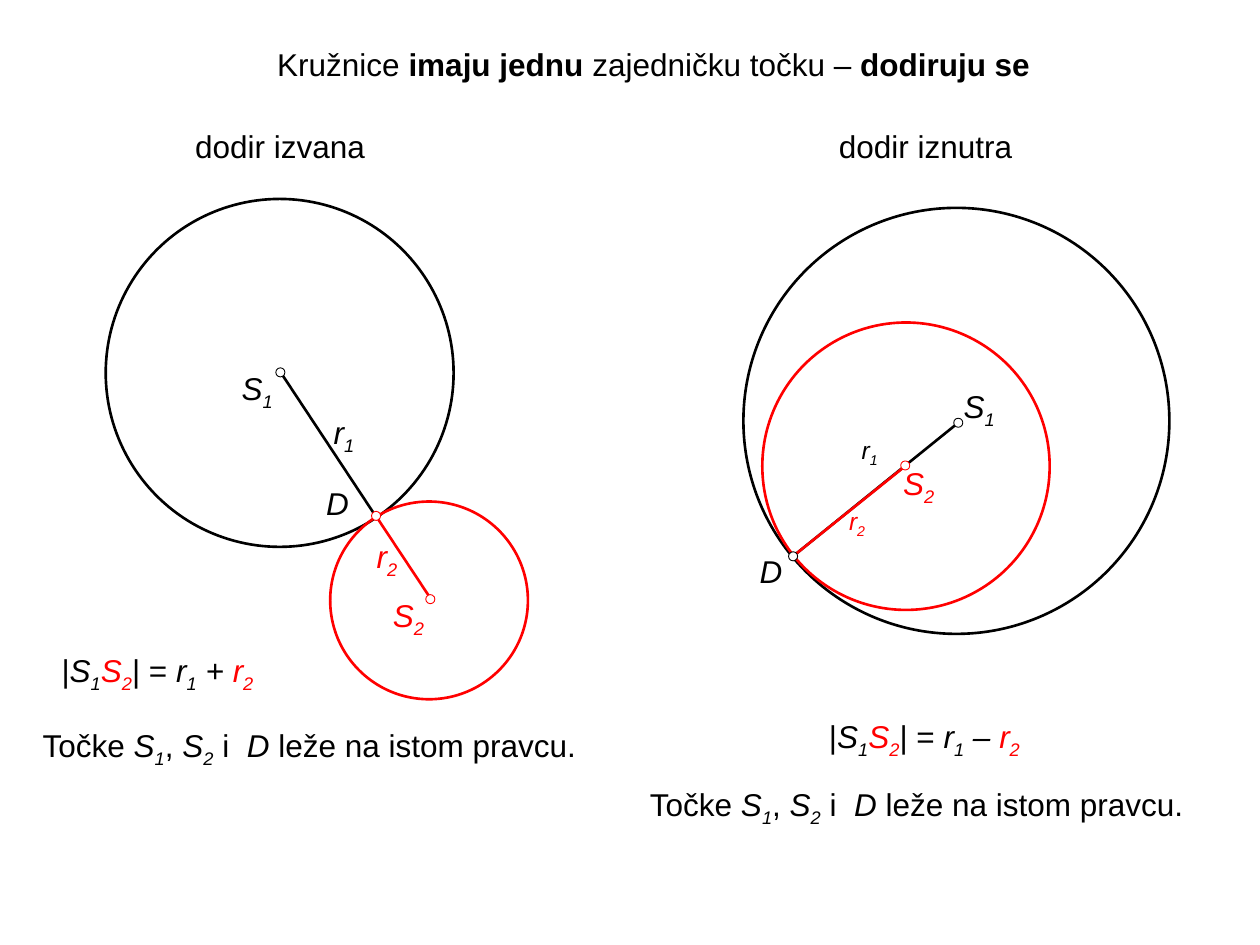
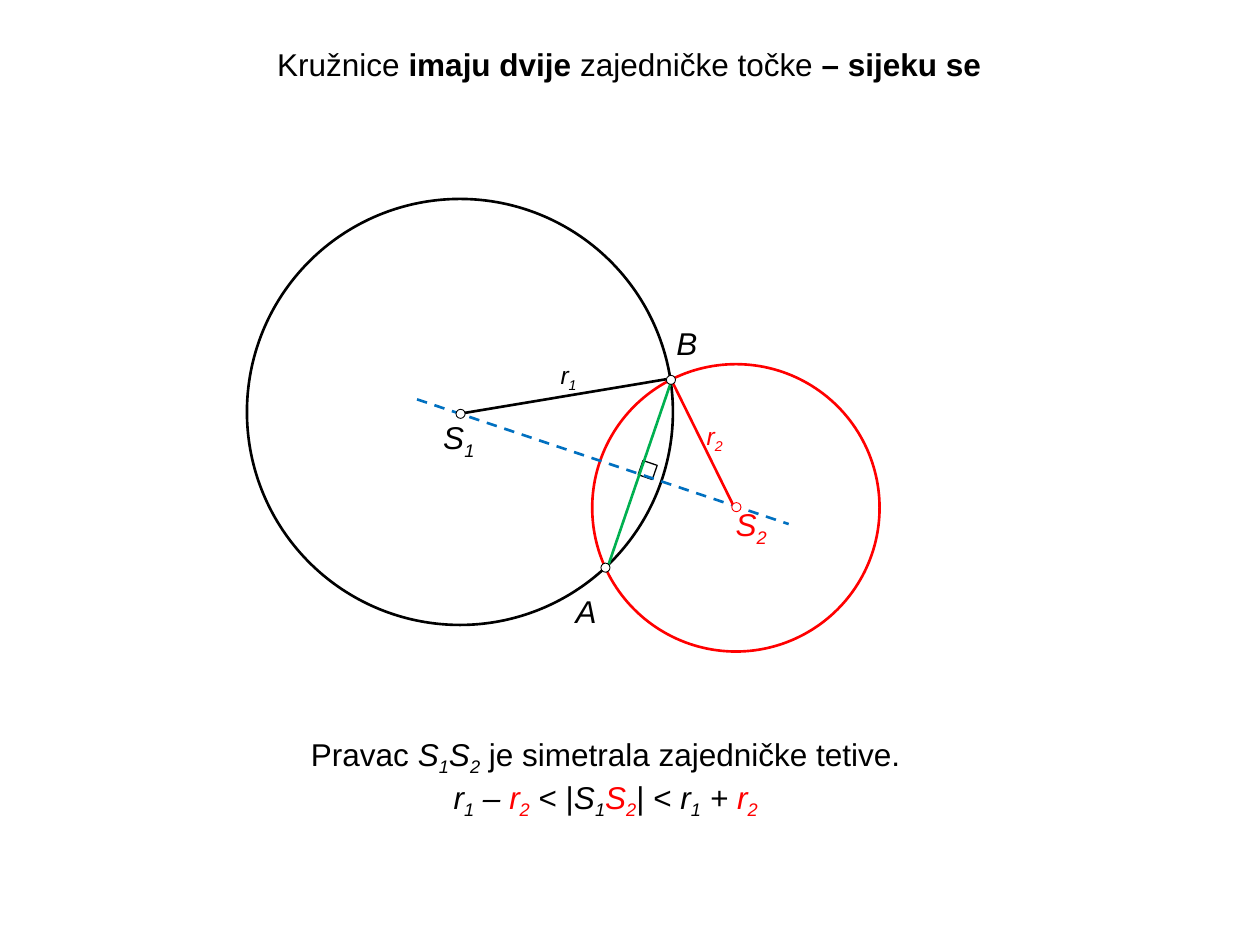
from lxml import etree
from pptx import Presentation
from pptx.dml.color import RGBColor
from pptx.enum import dml, shapes, text
from pptx.oxml import ns
from pptx.util import Pt

BLACK = RGBColor(0x00, 0x00, 0x00)
WHITE = RGBColor(0xFF, 0xFF, 0xFF)
RED = RGBColor(0xFF, 0x00, 0x00)
GREEN = RGBColor(0x00, 0xB0, 0x50)
BLUE = RGBColor(0x00, 0x70, 0xC0)
FONT = "Arial"
DOT_RADIUS = 2.6
LINE_HEIGHT = 29
LABEL_WIDTH = 35.3

# A run is (text, style): b bold, i italic, r red, _ subscript
S1 = [("S", "i"), ("1", "i_")]
S2 = [("S", "i"), ("2", "i_")]
R1 = [("r", "i"), ("1", "i_")]
S2_RED = [("S", "ir"), ("2", "ir_")]
R2_RED = [("r", "ir"), ("2", "ir_")]
S1S2 = [("|", "")] + S1 + S2_RED
POINTS_ON_LINE = ([("Točke ", "")] + S1 + [(", ", "")] + S2
                  + [(" i  ", ""), ("D", "i"), (" leže na istom pravcu.", "")])


def write(tf, lines, size=18, align=text.PP_ALIGN.LEFT):
    """Fill a text frame with lines, each a list of styled runs."""
    tf.word_wrap = True
    tf.vertical_anchor = text.MSO_ANCHOR.TOP
    for number, runs in enumerate(lines):
        p = tf.add_paragraph() if number else tf.paragraphs[0]
        p.alignment = align
        for wording, style in runs:
            r = p.add_run()
            r.text = wording
            r.font.name = FONT
            r.font.size = Pt(size)
            r.font.bold = "b" in style
            r.font.italic = "i" in style
            r.font.color.rgb = RED if "r" in style else BLACK
            if "_" in style:
                r._r.get_or_add_rPr().set("baseline", "-25000")


def add_centred(s, kind, centre, radius, color, width, fill=None):
    """Add an outlined shape around its centre point."""
    x, y = centre
    sp = s.shapes.add_shape(kind, Pt(x - radius), Pt(y - radius),
                            Pt(2 * radius), Pt(2 * radius))
    sp.shadow.inherit = False
    sp.line.color.rgb = color
    sp.line.width = Pt(width)
    if fill is None:
        sp.fill.background()
    else:
        sp.fill.solid()
        sp.fill.fore_color.rgb = fill
    return sp


# Touching circles: outside on the left, inside on the right
touching = {
    "title": [("Kružnice ", ""), ("imaju jednu ", "b"),
              ("zajedničku točku – ", ""), ("dodiruju se", "b")],
    # centre, radius, colour
    "circles": [
        ((159.8, 213.1), 99.4, BLACK), ((245.2, 343.1), 56.5, RED),
        ((546.5, 240.5), 121.7, BLACK), ((517.7, 266.4), 82.1, RED),
    ],
    # start, end, colour, dashed
    "segments": [
        ((160.6, 213.1), (215.3, 295.9), BLACK, False),
        ((214.6, 294.5), (247, 343.4), RED, False),
        ((453.6, 317.5), (547.2, 241.9), BLACK, False),
        ((453.6, 317.5), (515.5, 267.8), RED, False),
    ],
    # centre, colour
    "dots": [
        ((160.2, 212.8), BLACK), ((214.9, 294.8), RED), ((245.9, 342.4), RED),
        ((547.6, 241.6), BLACK), ((517.3, 266), RED), ((453.2, 317.9), BLACK),
    ],
    # left, top, width, size, runs
    "labels": [
        (104.4, 69.1, 141, 18, [("dodir izvana", "")]),
        (131, 207.4, LABEL_WIDTH, 18, S1),
        (183.6, 232.6, LABEL_WIDTH, 18, R1),
        (179.3, 272.9, LABEL_WIDTH, 18, [("D", "i")]),
        (208.1, 303.1, LABEL_WIDTH, 18, R2_RED),
        (217.4, 337, LABEL_WIDTH, 18, S2_RED),
        (28.1, 368.6, 144, 18, S1S2 + [("| = ", "")] + R1 + [(" + ", "i")] + R2_RED),
        (17.3, 411.1, 332.6, 18, POINTS_ON_LINE),
        (472.3, 69.1, 141, 18, [("dodir iznutra", "")]),
        (543.6, 217.4, LABEL_WIDTH, 18, S1),
        (485.3, 244.8, LABEL_WIDTH, 14, R1),
        (509, 261.4, LABEL_WIDTH, 18, S2_RED),
        (478.1, 285.8, LABEL_WIDTH, 14, R2_RED),
        (427, 311.8, LABEL_WIDTH, 18, [("D", "i")]),
        (466.6, 406.1, 144, 18, S1S2 + [("| = ", "")] + R1 + [(" – ", "i")] + R2_RED),
        (364.3, 445, 332.6, 18, POINTS_ON_LINE),
    ],
}

crossing = {
    "title": [("Kružnice ", ""), ("imaju dvije", "b"),
              (" zajedničke točke ", ""), ("– sijeku se", "b")],
    "circles": [((262.8, 235.4), 121.7, BLACK), ((420.5, 290.2), 82.1, RED)],
    "segments": [
        ((383, 219.6), (346.3, 326.9), GREEN, False),
        ((238.3, 228.2), (450.7, 299.5), BLUE, True),
        ((264.2, 236.2), (380.9, 216.7), BLACK, False),
        ((419, 288.7), (383.8, 217.4), RED, False),
    ],
    "dots": [
        ((263.2, 236.5), BLACK), ((420.8, 289.8), RED),
        ((346, 324.4), BLACK), ((383.4, 217.1), BLACK),
    ],
    "labels": [
        (246.2, 235.4, LABEL_WIDTH, 18, S1),
        (413.3, 285.1, LABEL_WIDTH, 18, S2_RED),
        (313.2, 202.3, LABEL_WIDTH, 14, R1),
        (396.7, 236.9, LABEL_WIDTH, 14, R2_RED),
        (321.8, 334.8, LABEL_WIDTH, 18, [("A", "i")]),
        (379.4, 181.4, LABEL_WIDTH, 18, [("B", "i")]),
    ],
}

prs = Presentation()
prs.slide_width, prs.slide_height = Pt(720), Pt(540)

for figure in (touching, crossing):
    s = prs.slides.add_slide(prs.slide_layouts[5])
    title = s.shapes.title
    title.left, title.top = Pt(151.2), Pt(22.3)
    title.width, title.height = Pt(452.2), Pt(LINE_HEIGHT)
    write(title.text_frame, [figure["title"]])
    title.text_frame.auto_size = text.MSO_AUTO_SIZE.NONE

    if figure is crossing:
        right_angle = add_centred(s, shapes.MSO_SHAPE.RECTANGLE,
                                  (370.1, 268.6), 4.3, BLACK, 0.75)
        right_angle.rotation = 19

    for centre, radius, color in figure["circles"]:
        add_centred(s, shapes.MSO_SHAPE.OVAL, centre, radius, color, 1.5)

    for start, end, color, dashed in figure["segments"]:
        segment = s.shapes.add_connector(shapes.MSO_CONNECTOR.STRAIGHT,
                                         *map(Pt, start + end))
        segment.line.color.rgb = color
        segment.line.width = Pt(1.5)
        if dashed:
            segment.line.dash_style = dml.MSO_LINE.DASH
        etree.SubElement(segment._element.spPr, ns.qn("a:effectLst"))

    for centre, color in figure["dots"]:
        add_centred(s, shapes.MSO_SHAPE.OVAL, centre, DOT_RADIUS, color, 0.5, WHITE)

    for left, top, width, size, runs in figure["labels"]:
        label = s.shapes.add_textbox(Pt(left), Pt(top), Pt(width), Pt(LINE_HEIGHT))
        write(label.text_frame, [runs], size)

# Conclusion under the crossing circles
conclusion = s.shapes.add_textbox(Pt(60.6), Pt(416.2), Pt(571), Pt(51.1))
write(conclusion.text_frame, [
    [("Pravac ", "")] + S1 + S2 + [(" je simetrala zajedničke tetive.", "")],
    R1 + [(" – ", "i")] + R2_RED + [(" < ", "")] + S1S2
    + [("| < ", "")] + R1 + [(" + ", "i")] + R2_RED,
], align=text.PP_ALIGN.CENTER)

prs.save("out.pptx")
